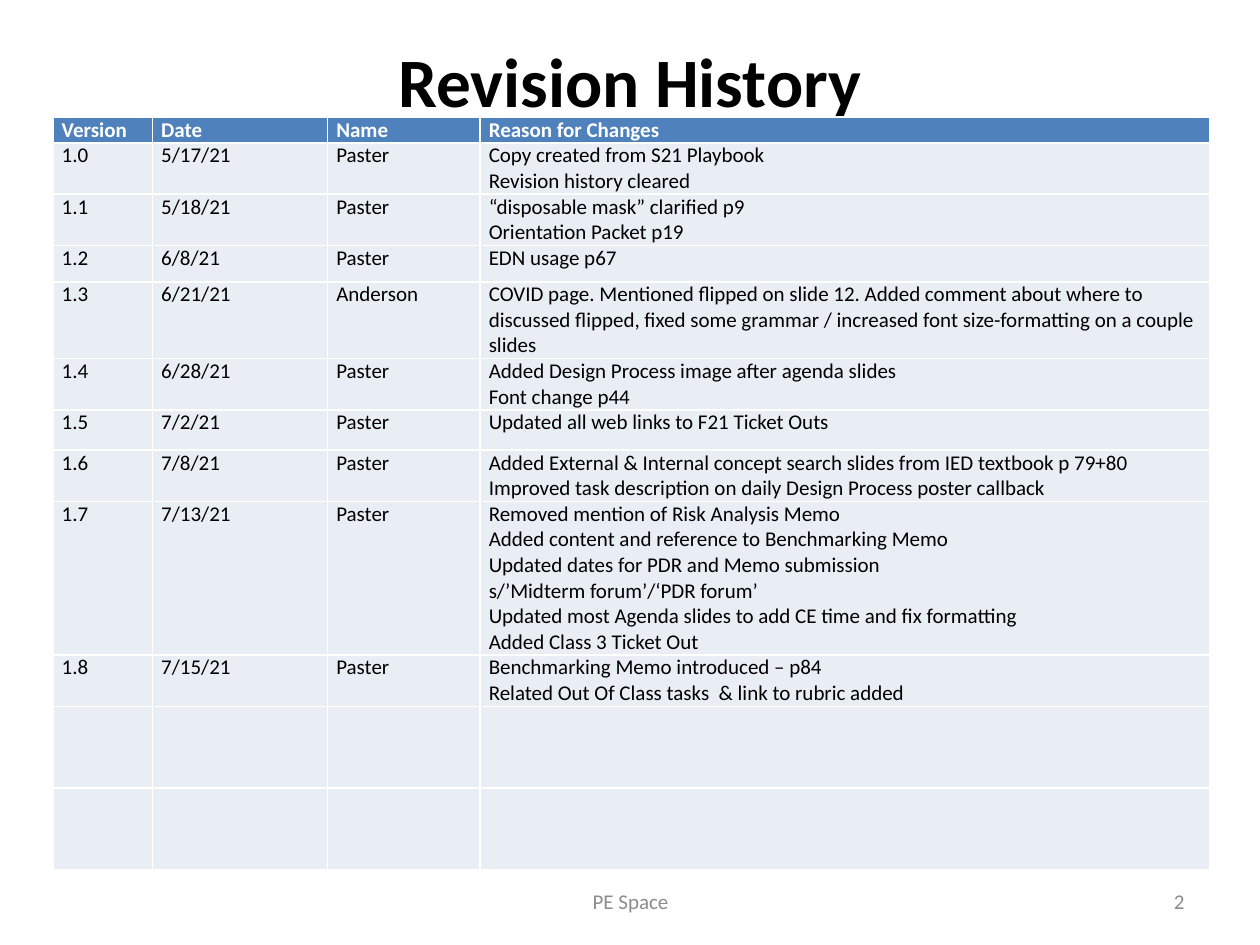
from dataclasses import dataclass

from pptx import Presentation
from pptx.dml.color import RGBColor
from pptx.enum.text import MSO_ANCHOR as Anchor, PP_ALIGN as Align
from pptx.util import Inches, Pt


@dataclass(frozen=True)
class Theme:
    font: str = "Calibri"
    title_size: float = 39.6
    text_size: float = 12
    black: str = "000000"
    white: str = "FFFFFF"
    grey: str = "8C8C8C"
    header_fill: str = "4F81BD"
    body_fill: str = "E9EDF4"


@dataclass(frozen=True)
class Revision:
    version: str = ""
    date: str = ""
    name: str = ""
    reasons: tuple[str, ...] = ()
    min_height: float = 0

    def cell_texts(self) -> tuple[str, ...]:
        return self.version, self.date, self.name, "\n".join(self.reasons)

    def height(self) -> float:
        return max(self.min_height, LINE_HEIGHT * len(self.reasons))


THEME = Theme()
LINE_HEIGHT = 0.2
COLUMN_WIDTHS = (0.79, 1.39, 1.21, 5.79)
EMPTY_ROW = Revision(min_height=0.65)

ROWS = (
    Revision("Version", "Date", "Name", ("Reason for Changes",)),
    Revision("1.0", "5/17/21", "Paster", (
        "Copy created from S21 Playbook",
        "Revision history cleared")),
    Revision("1.1", "5/18/21", "Paster", (
        "“disposable mask” clarified p9",
        "Orientation Packet p19")),
    Revision("1.2", "6/8/21", "Paster", ("EDN usage p67",), 0.29),
    Revision("1.3", "6/21/21", "Anderson", (
        "COVID page. Mentioned flipped on slide 12. Added comment about where to "
        "discussed flipped, fixed some grammar / increased font size-formatting "
        "on a couple slides",), 0.61),
    Revision("1.4", "6/28/21", "Paster", (
        "Added Design Process image after agenda slides",
        "Font change p44")),
    Revision("1.5", "7/2/21", "Paster", (
        "Updated all web links to F21 Ticket Outs",), 0.32),
    Revision("1.6", "7/8/21", "Paster", (
        "Added External & Internal concept search slides from IED textbook p 79+80",
        "Improved task description on daily Design Process poster callback")),
    Revision("1.7", "7/13/21", "Paster", (
        "Removed mention of Risk Analysis Memo",
        "Added content and reference to Benchmarking Memo",
        "Updated dates for PDR and Memo submission",
        "s/’Midterm forum’/‘PDR forum’",
        "Updated most Agenda slides to add CE time and fix formatting",
        "Added Class 3 Ticket Out")),
    Revision("1.8", "7/15/21", "Paster", (
        "Benchmarking Memo introduced – p84",
        "Related Out Of Class tasks  & link to rubric added")),
    EMPTY_ROW,
    EMPTY_ROW,
)


def format_text(frame, size: float, color: str, bold: bool = False,
                align: Align = Align.LEFT) -> None:
    for para in frame.paragraphs:
        para.alignment = align
        para.font.name = THEME.font
        para.font.size = Pt(size)
        para.font.bold = bold
        para.font.color.rgb = RGBColor.from_string(color)
        for span in para.runs:
            span.font.name = THEME.font
            span.font.size = Pt(size)
            span.font.bold = bold
            span.font.color.rgb = RGBColor.from_string(color)


def set_title(page, text: str) -> None:
    title = page.shapes.title
    title.left, title.top = Inches(0.5), Inches(0.3)
    title.width, title.height = Inches(9), Inches(1.25)
    frame = title.text_frame
    frame.text = text
    frame.vertical_anchor = Anchor.TOP
    frame.margin_top = 0
    format_text(frame, THEME.title_size, THEME.black, True, Align.CENTER)


def add_history_table(page, rows: tuple[Revision, ...]) -> None:
    heights = [row.height() for row in rows]
    table = page.shapes.add_table(
        len(rows), len(COLUMN_WIDTHS), Inches(0.42), Inches(0.93),
        Inches(sum(COLUMN_WIDTHS)), Inches(sum(heights))).table
    table.horz_banding = False
    for column, width in zip(table.columns, COLUMN_WIDTHS):
        column.width = Inches(width)
    for index, (row, revision) in enumerate(zip(table.rows, rows)):
        is_header = index == 0
        row.height = Inches(heights[index])
        for cell, text in zip(row.cells, revision.cell_texts()):
            cell.text_frame.text = text
            cell.margin_left = cell.margin_right = Inches(0.07)
            cell.margin_top = cell.margin_bottom = 0
            cell.fill.solid()
            cell.fill.fore_color.rgb = RGBColor.from_string(
                THEME.header_fill if is_header else THEME.body_fill)
            format_text(cell.text_frame, THEME.text_size,
                        THEME.white if is_header else THEME.black, is_header)


def add_footer(page, text: str, left: float, width: float, align: Align) -> None:
    box = page.shapes.add_textbox(Inches(left), Inches(6.95), Inches(width), Inches(0.4))
    frame = box.text_frame
    frame.word_wrap = True
    frame.vertical_anchor = Anchor.MIDDLE
    frame.text = text
    format_text(frame, THEME.text_size, THEME.grey, align=align)


def main() -> None:
    deck = Presentation()
    deck.slide_width, deck.slide_height = Inches(10), Inches(7.5)
    page = deck.slides.add_slide(deck.slide_layouts.get_by_name("Title Only"))
    set_title(page, "Revision History")
    add_history_table(page, ROWS)
    add_footer(page, "PE Space", 3.42, 3.17, Align.CENTER)
    add_footer(page, "2", 7.17, 2.33, Align.RIGHT)
    deck.save("out.pptx")


if __name__ == "__main__":
    main()
